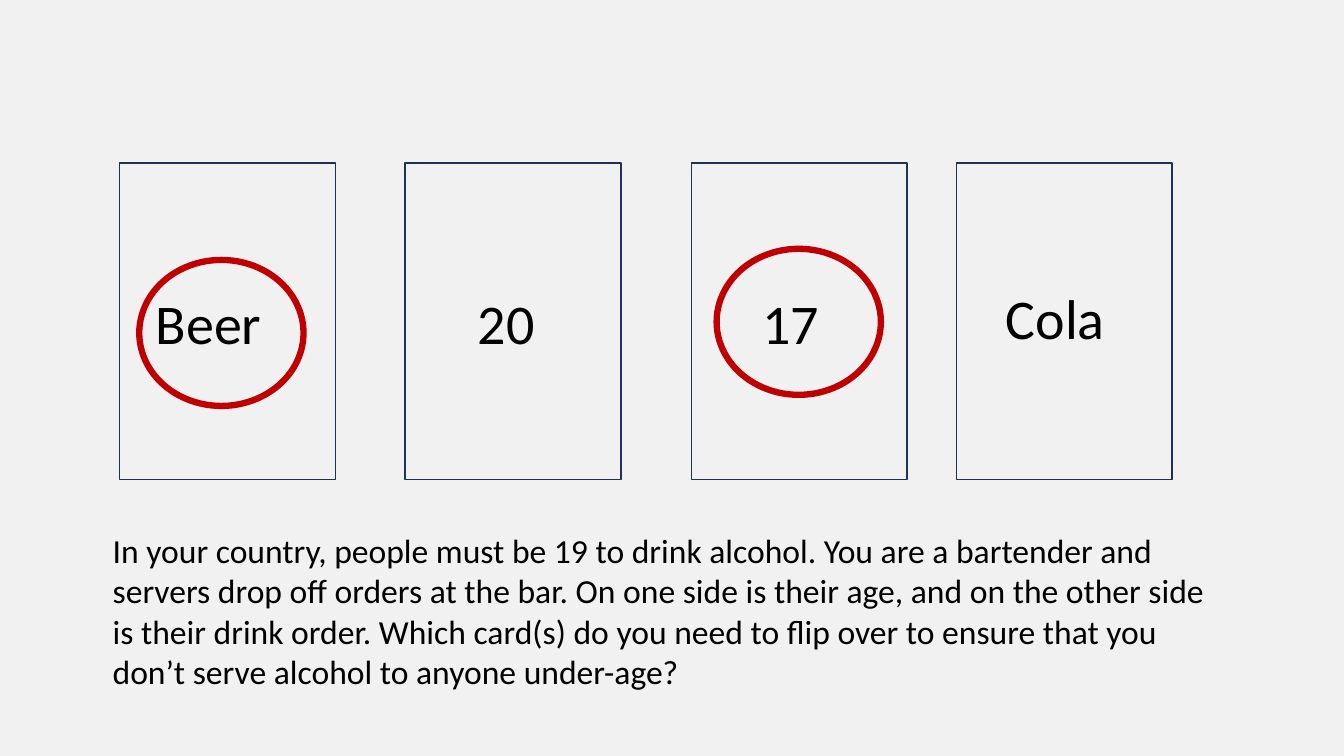
from pptx import Presentation
from pptx.dml.color import RGBColor
from pptx.enum.shapes import MSO_SHAPE
from pptx.enum.text import MSO_AUTO_SIZE
from pptx.util import Cm, Pt

RECTANGLE = MSO_SHAPE.RECTANGLE
OVAL = MSO_SHAPE.OVAL
FIT_SHAPE = MSO_AUTO_SIZE.SHAPE_TO_FIT_TEXT
COLORS = {"background": "F2F1F1", "card": "1E3256", "circle": "C00000", "text": "000000"}
BLANK_LAYOUT = 6

presentation = Presentation()
presentation.slide_width = Cm(33.87)
presentation.slide_height = Cm(19.05)
slide = presentation.slides.add_slide(presentation.slide_layouts[BLANK_LAYOUT])
slide.background.fill.solid()
slide.background.fill.fore_color.rgb = RGBColor.from_string(COLORS["background"])


def add_outline(kind, left, top, width, height, color, weight):
    shape = slide.shapes.add_shape(kind, Cm(left), Cm(top), Cm(width), Cm(height))
    shape.shadow.inherit = False
    shape.fill.background()
    shape.line.color.rgb = RGBColor.from_string(COLORS[color])
    shape.line.width = Pt(weight)


def add_text(text, left, top, width, height, size):
    box = slide.shapes.add_textbox(Cm(left), Cm(top), Cm(width), Cm(height))
    frame = box.text_frame
    frame.word_wrap = True
    frame.auto_size = FIT_SHAPE
    run = frame.paragraphs[0].add_run()
    run.text = text
    run.font.name = "Calibri"
    run.font.size = Pt(size)
    run.font.color.rgb = RGBColor.from_string(COLORS["text"])


cards = [
    ("Beer", 3.02, 3.68, 7.14, 4.14),
    ("20", 10.21, 11.79, 7.14, 2.31),
    ("17", 17.42, 18.97, 7.14, 2.31),
    ("Cola", 24.1, 25.1, 7.01, 4.34),
]
for label, card_left, label_left, label_top, label_width in cards:
    add_outline(RECTANGLE, card_left, 4.11, 5.44, 7.98, "card", 1)
    add_text(label, label_left, label_top, label_width, 1.96, 40)

question = (
    "In your country, people must be 19 to drink alcohol. You are a bartender and "
    "servers drop off orders at the bar. On one side is their age, and on the other "
    "side is their drink order. Which card(s) do you need to flip over to ensure that "
    "you don’t serve alcohol to anyone under-age?"
)
add_text(question, 2.59, 13.23, 28.68, 4.37, 24)

for circle_left, circle_top in [(3.51, 6.55), (18.06, 6.27)]:
    add_outline(OVAL, circle_left, circle_top, 4.14, 3.68, "circle", 4.5)

presentation.save("out.pptx")
